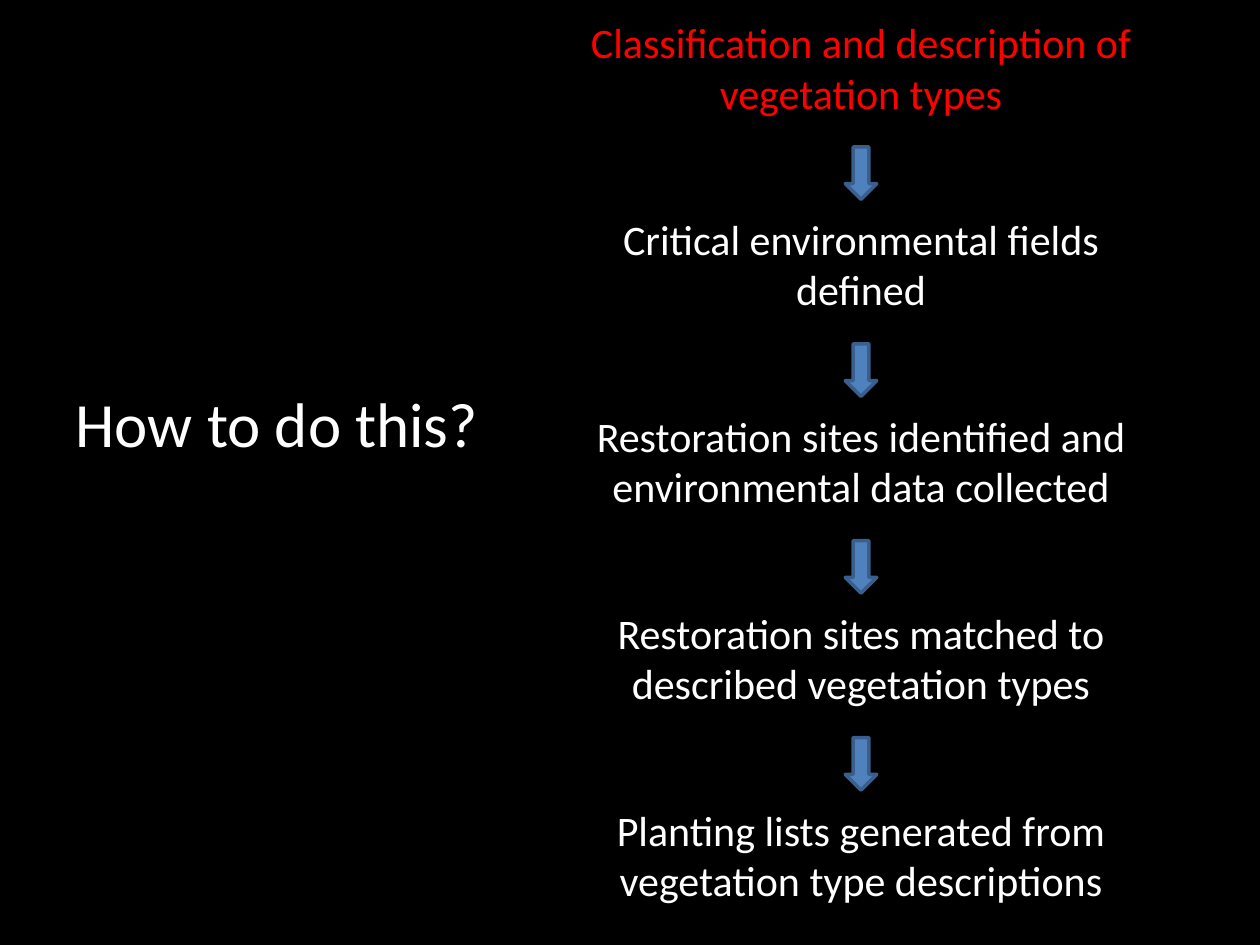
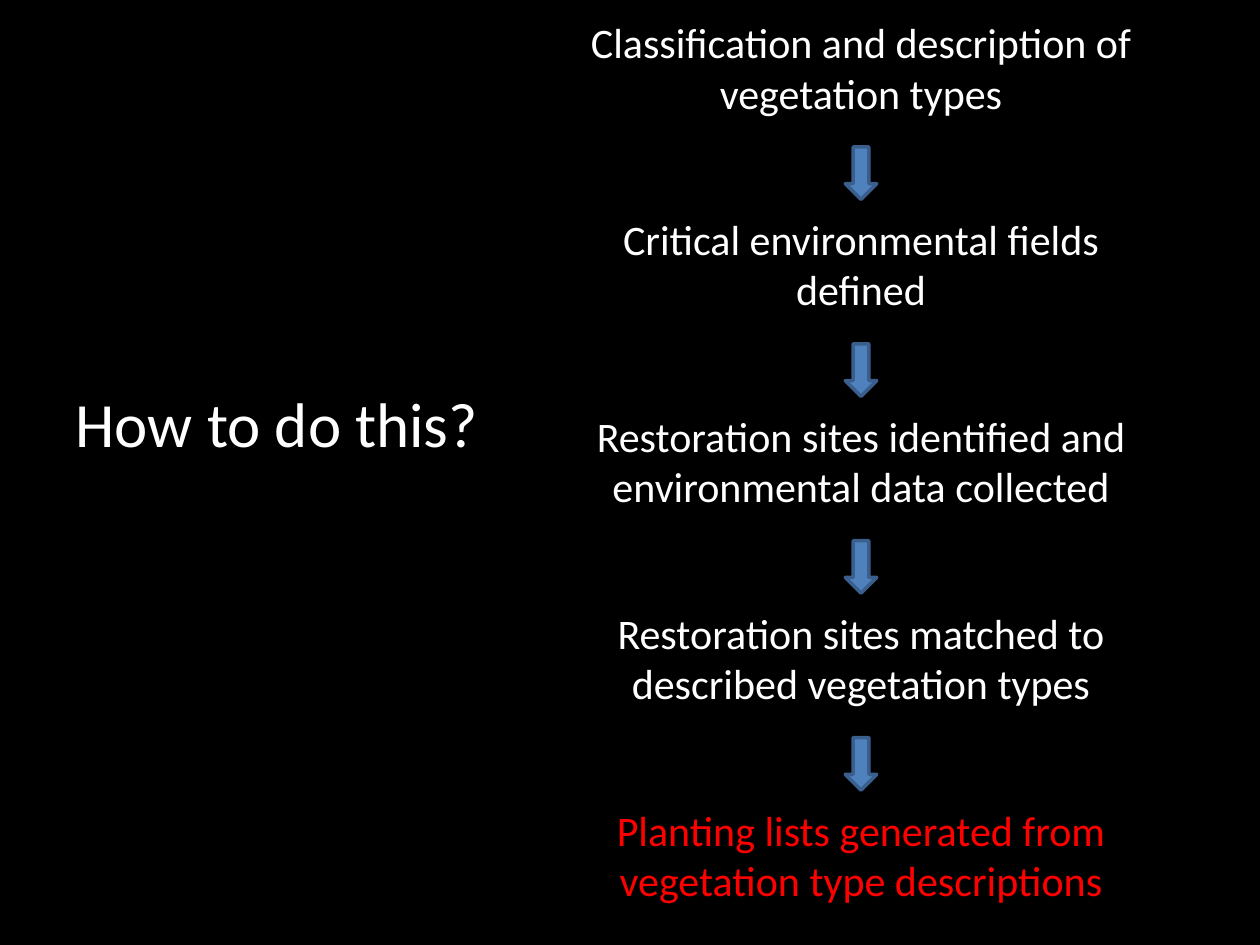
from pptx import Presentation
from pptx.dml.color import RGBColor
from pptx.enum.shapes import MSO_SHAPE
from pptx.enum.text import MSO_ANCHOR, MSO_AUTO_SIZE, PP_ALIGN
from pptx.util import Inches, Pt

STEPS = [
    "Classification and description of vegetation types",
    "Critical environmental fields defined",
    "Restoration sites identified and environmental data collected",
    "Restoration sites matched to described vegetation types",
    "Planting lists generated from vegetation type descriptions",
]
HIGHLIGHTED_STEPS = [0, len(STEPS) - 1]
COLUMNS, ROWS = 120, 90
STEP_LEFT, STEP_WIDTH, STEP_HEIGHT = 52, 60, 11
FIRST_ROW, STEP_PITCH = 1, 18.75
ARROW_WIDTH, ARROW_HEIGHT, ARROW_OFFSET = 3, 5, 13


def color(hex_code):
    return RGBColor.from_string(hex_code)


class FlowDeck:
    """Holds the deck's style and the slide being filled, on a 120 by 90 grid."""

    font = "Calibri"
    black, white, red = "000000", "FFFFFF", "FF0000"
    arrow_fill, arrow_line = "4F81BD", "3A5F8C"

    def __init__(self):
        self.deck = Presentation()
        self.deck.slide_width, self.deck.slide_height = Inches(10), Inches(7.5)
        backdrop = self.deck.slide_master.background.fill
        backdrop.solid()
        backdrop.fore_color.rgb = color(self.black)

    def start_slide(self):
        self.slide = self.deck.slides.add_slide(self.deck.slide_layouts[5])

    def area(self, left, top, width, height):
        column = self.deck.slide_width / COLUMNS
        row = self.deck.slide_height / ROWS
        return [round(n) for n in (left * column, top * row, width * column, height * row)]

    def set_text(self, holder, text, size, ink, alignment):
        frame = holder.text_frame
        frame.text = text
        frame.word_wrap = True
        frame.auto_size = MSO_AUTO_SIZE.SHAPE_TO_FIT_TEXT
        frame.vertical_anchor = MSO_ANCHOR.TOP
        paragraph = frame.paragraphs[0]
        paragraph.alignment = alignment
        for run in paragraph.runs:
            run.font.name, run.font.size = self.font, Pt(size)
            run.font.color.rgb = color(ink)

    def title(self, text, *cells):
        heading = self.slide.shapes.title
        heading.left, heading.top, heading.width, heading.height = self.area(*cells)
        self.set_text(heading, text, 36, self.white, PP_ALIGN.LEFT)

    def shape(self, preset, cells, line, line_width):
        drawn = self.slide.shapes.add_shape(preset, *self.area(*cells))
        drawn.shadow.inherit = False
        drawn.line.color.rgb = color(line)
        drawn.line.width = Pt(line_width)
        return drawn

    def step(self, text, top, highlighted):
        cells = (STEP_LEFT, top, STEP_WIDTH, STEP_HEIGHT)
        box = self.shape(MSO_SHAPE.RECTANGLE, cells, self.black, 0.25)
        box.fill.background()
        ink = self.red if highlighted else self.white
        self.set_text(box, text, 24, ink, PP_ALIGN.CENTER)

    def arrow(self, top):
        left = STEP_LEFT + (STEP_WIDTH - ARROW_WIDTH) / 2
        cells = (left, top, ARROW_WIDTH, ARROW_HEIGHT)
        pointer = self.shape(MSO_SHAPE.DOWN_ARROW, cells, self.arrow_line, 2)
        pointer.fill.solid()
        pointer.fill.fore_color.rgb = color(self.arrow_fill)

    def flow(self, highlighted_step):
        tops = [FIRST_ROW + i * STEP_PITCH for i in range(len(STEPS))]
        for i, (text, top) in enumerate(zip(STEPS, tops)):
            self.step(text, top, i == highlighted_step)
        for top in tops[:-1]:
            self.arrow(top + ARROW_OFFSET)


def main():
    flow_deck = FlowDeck()
    for highlighted_step in HIGHLIGHTED_STEPS:
        flow_deck.start_slide()
        flow_deck.title("How to do this?", 6, 36, 43, 8.5)
        flow_deck.flow(highlighted_step)
    flow_deck.deck.save("out.pptx")


if __name__ == "__main__":
    main()
